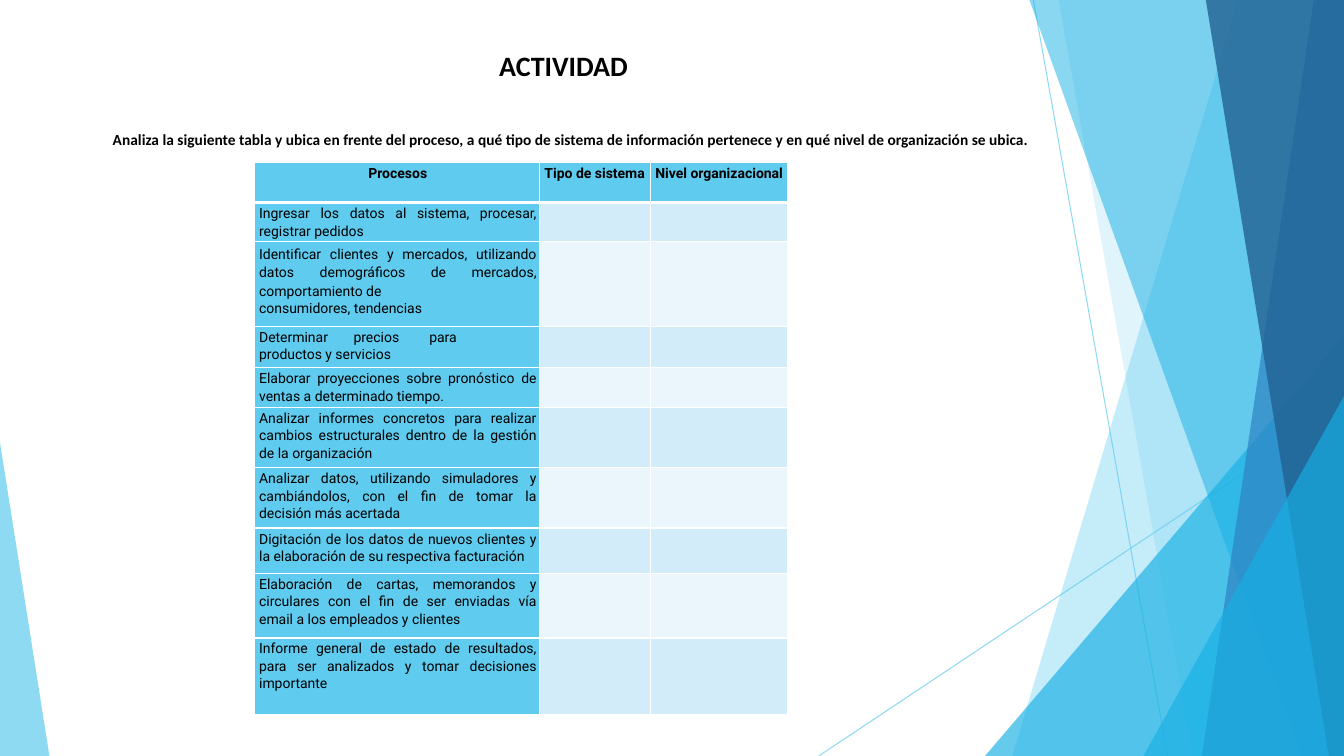
"""Build the ACTIVIDAD slide: a process table over a faceted blue background."""
from dataclasses import dataclass

import pptx
import pptx.dml.color
import pptx.enum.shapes
import pptx.enum.text
import pptx.oxml
import pptx.oxml.ns
import pptx.util
from pptx.util import Inches

ALIGN = pptx.enum.text.PP_ALIGN


@dataclass(frozen=True)
class Theme:
    """Colours, fonts and type sizes of the slide."""
    sky: str = "5FCBEF"
    cyan: str = "17B0E4"
    blue: str = "2E83C3"
    navy: str = "226292"
    bands: tuple = ("D2ECF9", "EAF6FC")
    white: str = "FFFFFF"
    black: str = "000000"
    text_font: str = "Calibri"
    table_font: str = "Roboto"
    title_size: float = 20
    instruction_size: float = 11
    table_size: float = 10


THEME = Theme()
SLIDE_WIDTH, SLIDE_HEIGHT = 13.33, 7.5
COLUMN_WIDTHS = (2.83, 1.1, 1.36)
ROW_HEIGHTS = (0.4, 0.39, 0.84, 0.41, 0.39, 0.6, 0.6, 0.45, 0.64, 0.76)
HEADERS = ("Procesos", "Tipo de sistema", "Nivel organizacional")
PROCESSES = (
    "Ingresar los datos al sistema, procesar, registrar pedidos",
    "Identificar clientes y mercados, utilizando datos demográficos de mercados, "
    "comportamiento de\nconsumidores, tendencias",
    "Determinar \tprecios \tpara\nproductos y servicios",
    "Elaborar proyecciones sobre pronóstico de ventas a determinado tiempo.",
    "Analizar informes concretos para realizar cambios estructurales dentro de la gestión "
    "de la organización",
    "Analizar datos, utilizando simuladores y cambiándolos, con el fin de tomar la decisión "
    "más acertada",
    "Digitación de los datos de nuevos clientes y la elaboración de su respectiva facturación",
    "Elaboración de cartas, memorandos y circulares con el fin de ser enviadas vía email "
    "a los empleados y clientes",
    "Informe general de estado de resultados, para ser analizados y tomar decisiones importante",
)
INSTRUCTION = (
    "Analiza la siguiente tabla y ubica en frente del proceso, a qué tipo de sistema de "
    "información pertenece y en qué nivel de organización se ubica."
)


def rgb(colour):
    """Turn a hex string into a colour."""
    return pptx.dml.color.RGBColor.from_string(colour)


def set_opacity(element, percent):
    """Make the only colour below an element partly transparent."""
    colour = next(element.iter(pptx.oxml.ns.qn("a:srgbClr")))
    colour.append(pptx.oxml.parse_xml(
        f'<a:alpha {pptx.oxml.ns.nsdecls("a")} val="{percent * 1000}"/>'))


def paint(shape, colour, opacity):
    """Give a background facet a transparent fill, no line and no shadow."""
    shape.shadow.inherit = False
    shape.line.fill.background()
    shape.fill.solid()
    shape.fill.fore_color.rgb = rgb(colour)
    set_opacity(shape.fill._xPr, opacity)


def add_ray(slide, start, end):
    """Draw a thin background line."""
    ray = slide.shapes.add_connector(
        pptx.enum.shapes.MSO_CONNECTOR.STRAIGHT, *map(Inches, start + end))
    ray.line.color.rgb = rgb(THEME.sky)
    ray.line.width = pptx.util.Pt(0.75)
    properties = ray._element.spPr
    set_opacity(properties, 70)
    properties.append(pptx.oxml.parse_xml(f'<a:effectLst {pptx.oxml.ns.nsdecls("a")}/>'))


def add_facet(slide, top_left, bottom_left, colour, opacity):
    """Draw a full-height facet that reaches the right edge of the slide."""
    builder = slide.shapes.build_freeform(Inches(top_left), Inches(0))
    corners = ((SLIDE_WIDTH, 0), (SLIDE_WIDTH, SLIDE_HEIGHT), (bottom_left, SLIDE_HEIGHT))
    builder.add_line_segments([(Inches(x), Inches(y)) for x, y in corners], close=True)
    paint(builder.convert_to_shape(), colour, opacity)


def add_corner(slide, left, top, width, apex, colour, opacity):
    """Draw a triangle standing on the bottom edge, its apex at 0 (left) or 1 (right)."""
    triangle = slide.shapes.add_shape(
        pptx.enum.shapes.MSO_SHAPE.ISOSCELES_TRIANGLE,
        Inches(left), Inches(top), Inches(width), Inches(SLIDE_HEIGHT - top))
    triangle.adjustments[0] = apex
    paint(triangle, colour, opacity)


def add_background(slide):
    """Draw the rays and facets from back to front."""
    add_ray(slide, (10.25, 0), (11.58, SLIDE_HEIGHT))
    add_ray(slide, (SLIDE_WIDTH, 4.03), (8.12, SLIDE_HEIGHT))
    add_facet(slide, 12.28, 10.04, THEME.sky, 36)
    add_facet(slide, 10.5, 11.83, THEME.sky, 20)
    add_corner(slide, 9.77, 3.33, 3.56, 1, THEME.cyan, 66)
    add_facet(slide, 10.21, 12.91, THEME.cyan, 50)
    add_facet(slide, 13.03, 11.92, THEME.blue, 70)
    add_facet(slide, 11.96, 13.18, THEME.navy, 80)
    add_corner(slide, 11.34, 3.93, 1.99, 1, THEME.cyan, 66)
    add_corner(slide, 0, 4.39, 0.49, 0, THEME.sky, 70)


def format_runs(paragraph, font, size, bold):
    """Format every run of a paragraph in black."""
    for run in paragraph.runs:
        run.font.name = font
        run.font.size = pptx.util.Pt(size)
        run.font.bold = bold
        run.font.color.rgb = rgb(THEME.black)


def fill_text(shape, box, text, size, alignment):
    """Place a shape and write one bold paragraph in it."""
    shape.left, shape.top, shape.width, shape.height = map(Inches, box)
    frame = shape.text_frame
    frame.text = text
    frame.word_wrap = True
    frame.auto_size = pptx.enum.text.MSO_AUTO_SIZE.SHAPE_TO_FIT_TEXT
    frame.vertical_anchor = pptx.enum.text.MSO_ANCHOR.TOP
    frame.paragraphs[0].alignment = alignment
    format_runs(frame.paragraphs[0], THEME.text_font, size, True)


def add_tab_stops(paragraph):
    """Add the centre and right tab stops of a spread-out line."""
    paragraph._p.get_or_add_pPr().append(pptx.oxml.parse_xml(
        f'<a:tabLst {pptx.oxml.ns.nsdecls("a")}>'
        f'<a:tab pos="{Inches(1.18)}" algn="ctr"/><a:tab pos="{Inches(1.96)}" algn="r"/>'
        '</a:tabLst>'))


def style_cell(cell, fill, top=1, bottom=1):
    """Set the margins, white borders and fill of a cell."""
    cell.margin_left, cell.margin_top = Inches(0.05), Inches(0.02)
    cell.margin_right, cell.margin_bottom = Inches(0.03), Inches(0)
    properties = cell._tc.get_or_add_tcPr()
    for side, width in (("L", 1), ("R", 1), ("T", top), ("B", bottom)):
        properties.append(pptx.oxml.parse_xml(
            f'<a:ln{side} {pptx.oxml.ns.nsdecls("a")} w="{pptx.util.Pt(width)}"><a:solidFill>'
            f'<a:srgbClr val="{THEME.white}"/></a:solidFill></a:ln{side}>'))
    cell.fill.solid()
    cell.fill.fore_color.rgb = rgb(fill)


def write_cell(cell, text, alignment, bold=False):
    """Write the paragraphs of a cell."""
    cell.text_frame.text = text
    for paragraph in cell.text_frame.paragraphs:
        paragraph.alignment = alignment
        paragraph.line_spacing = 1.07
        format_runs(paragraph, THEME.table_font, THEME.table_size, bold)
        if "\t" in paragraph.text:
            add_tab_stops(paragraph)


def add_process_table(slide):
    """Add the table of processes with two empty columns to fill in."""
    table = slide.shapes.add_table(
        len(ROW_HEIGHTS), len(COLUMN_WIDTHS), Inches(2.52), Inches(1.61),
        Inches(sum(COLUMN_WIDTHS)), Inches(sum(ROW_HEIGHTS))).table
    table.first_row = table.horz_banding = False
    for column, width in zip(table.columns, COLUMN_WIDTHS):
        column.width = Inches(width)
    for row, height in zip(table.rows, ROW_HEIGHTS):
        row.height = Inches(height)
    for index, header in enumerate(HEADERS):
        style_cell(table.cell(0, index), THEME.sky, bottom=3)
        write_cell(table.cell(0, index), header, ALIGN.LEFT if index else ALIGN.CENTER, True)
    for number, process in enumerate(PROCESSES):
        band = THEME.bands[number % 2]
        for cell, fill in zip(table.rows[number + 1].cells, (THEME.sky, band, band)):
            style_cell(cell, fill, top=1 if number else 3)
        write_cell(table.cell(number + 1, 0), process, ALIGN.JUSTIFY)
    table.cell(2, 0).text_frame.paragraphs[0].line_spacing = 1.14


def main():
    """Build and save the presentation."""
    presentation = pptx.Presentation()
    presentation.slide_width = Inches(SLIDE_WIDTH)
    presentation.slide_height = Inches(SLIDE_HEIGHT)
    slide = presentation.slides.add_slide(presentation.slide_layouts.get_by_name("Title Only"))
    add_background(slide)
    fill_text(slide.shapes.title, (3.66, 0.43, 3.86, 0.44), "ACTIVIDAD",
              THEME.title_size, ALIGN.CENTER)
    instruction = slide.shapes.add_textbox(0, 0, 0, 0)
    fill_text(instruction, (1.02, 1.24, 10.46, 0.29), INSTRUCTION,
              THEME.instruction_size, ALIGN.LEFT)
    add_process_table(slide)
    presentation.save("out.pptx")


if __name__ == "__main__":
    main()
